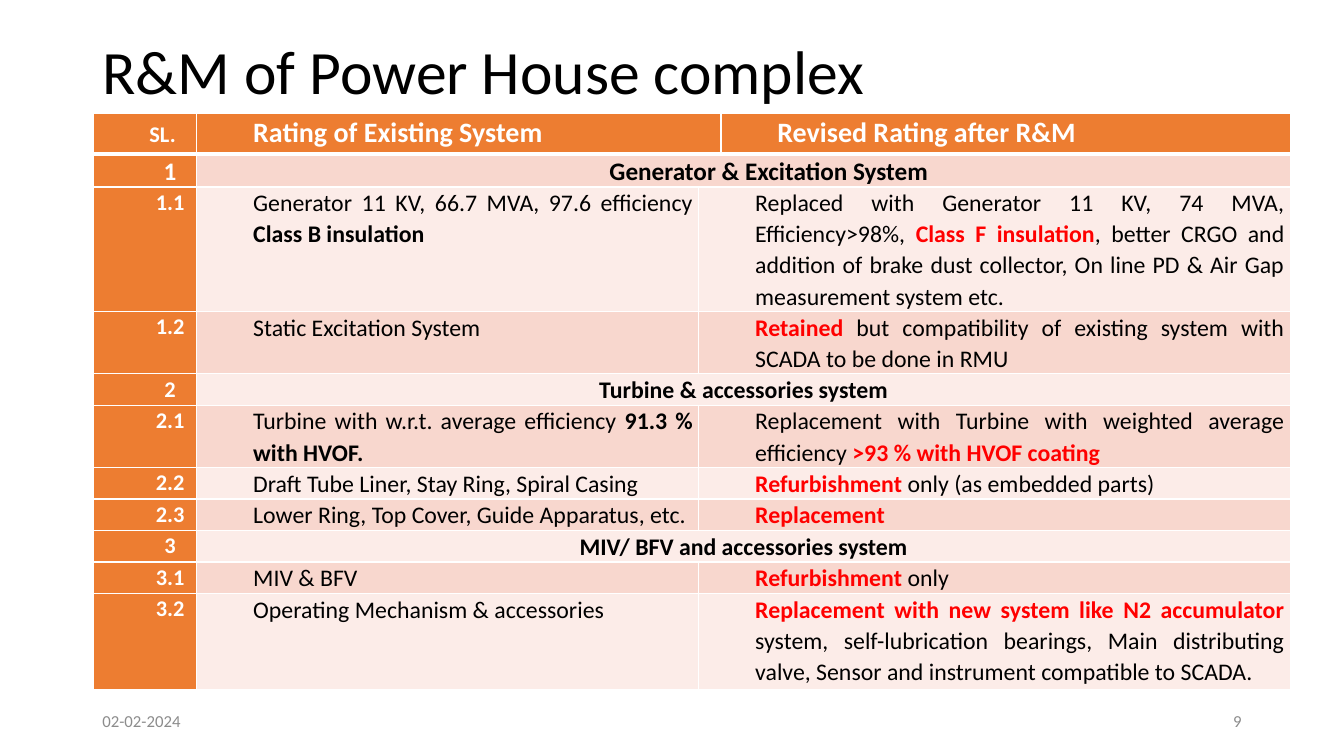
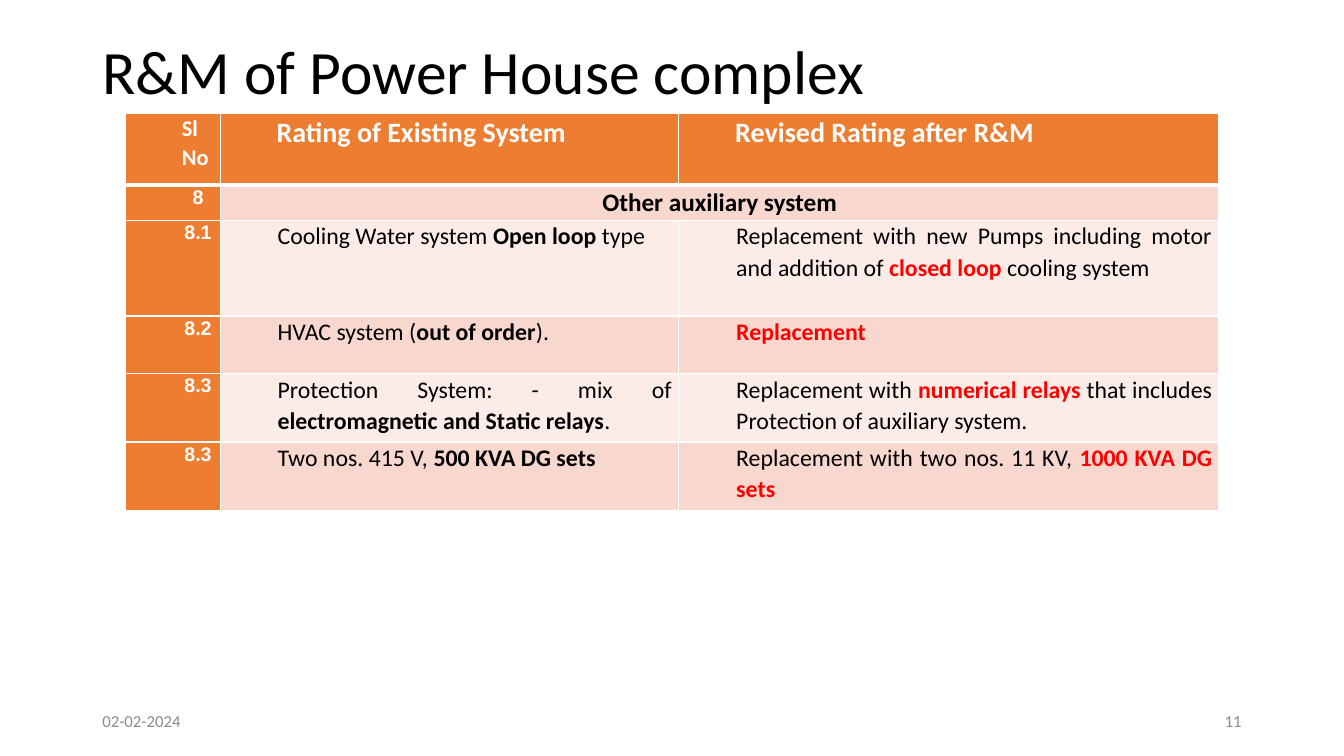
from lxml.etree import fromstring
from pptx import Presentation
from pptx.dml.color import RGBColor
from pptx.enum.text import MSO_ANCHOR as Anchor, MSO_AUTO_SIZE as Fit, PP_ALIGN as Align
from pptx.util import Pt

HUES = {"head": "ED7D31", "odd": "F8D7CE", "even": "FCECE8", "white": "FFFFFF",
        "black": "000000", "red": "FF0000", "grey": "8C8C8C"}
TITLE = "R&M of Power House complex"
DATE = "02-02-2024"
HEADS = ["Rating of Existing System", "Revised Rating after R&M"]
INDENT = 36
RULE = ('<a:lnB xmlns:a="http://schemas.openxmlformats.org/drawingml/2006/main" w="38100">'
        f'<a:solidFill><a:srgbClr val="{HUES["white"]}"/></a:solidFill></a:lnB>')

# Rows with two entries are section bands; *stars* mark the key words.
PAGES = [
    {"page": "9", "left": 66.4, "label": "SL.", "anchor": Anchor.MIDDLE, "pad": 4.3,
     "cols": [74.2, 358.6, 15.8, 406.8],
     "rows": [29, 23.5, 89, 44.5, 22.5, 44.5, 22.5, 22.5, 22.5, 22.5, 69],
     "font": "Calibri", "size": 16, "first": 18, "shift": INDENT,
     "body": [
         ("1", "Generator & Excitation System"),
         ("1.1", "Generator 11 KV, 66.7 MVA, 97.6 efficiency *Class B insulation*",
          "Replaced with Generator 11 KV, 74 MVA, Efficiency>98%, *Class F insulation*, "
          "better CRGO and addition of brake dust collector, On line PD & Air Gap "
          "measurement system etc."),
         ("1.2", "Static Excitation System",
          "*Retained* but compatibility of existing system with SCADA to be done in RMU"),
         ("2", "Turbine & accessories system"),
         ("2.1", "Turbine with w.r.t. average efficiency *91.3 % with HVOF.*",
          "Replacement with Turbine with weighted average efficiency "
          "*>93 % with HVOF coating*"),
         ("2.2", "Draft Tube Liner, Stay Ring, Spiral Casing",
          "*Refurbishment* only (as embedded parts)"),
         ("2.3", "Lower Ring, Top Cover, Guide Apparatus, etc.", "*Replacement*"),
         ("3", "MIV/ BFV and accessories system"),
         ("3.1", "MIV & BFV", "*Refurbishment* only"),
         ("3.2", "Operating Mechanism & accessories",
          "*Replacement with new system like N2 accumulator *system, self-lubrication "
          "bearings, Main distributing valve, Sensor and instrument compatible to SCADA."),
     ]},
    {"page": "11", "left": 89.6, "label": "Sl No", "anchor": Anchor.TOP, "pad": 5,
     "cols": [67.7, 327.6, 385.9],
     "rows": [51.1, 25.2, 68.4, 41, 49, 49],
     "font": "Arial", "size": 14, "first": 14, "shift": 0,
     "body": [
         ("8", "Other auxiliary system"),
         ("8.1", "Cooling Water system *Open loop *type",
          "Replacement with new Pumps including motor and addition of "
          "*closed loop *cooling system"),
         ("8.2", "HVAC system (*out of order*).", "*Replacement*"),
         ("8.3", "Protection System: - mix of *electromagnetic and Static relays*.",
          "Replacement with *numerical relays *that includes Protection of "
          "auxiliary system."),
         ("8.3", "Two nos. 415 V, *500 KVA DG sets*",
          "Replacement with two nos. 11 KV, *1000 KVA DG sets*"),
     ]},
]


def style(para, size, hue, align, bold=False, name="Calibri"):
    para.alignment = align
    font = para.font
    font.name, font.size, font.bold = name, Pt(size), bold
    font.color.rgb = RGBColor.from_string(HUES[hue])


def write(cell, text, size, hue, align, indent=INDENT, bold=False, name="Calibri", key=None):
    """Fill a cell's text; starred parts turn bold, in the key hue if given."""
    para = cell.text_frame.paragraphs[0]
    style(para, size, hue, align, bold, name)
    para.line_spacing = 1.07
    para._p.get_or_add_pPr().set("marL", str(Pt(indent)))
    for i, part in enumerate(text.split("*")):
        if part:
            run = para.add_run()
            run.text = part
            if i % 2:
                run.font.bold = True
                if key:
                    run.font.color.rgb = RGBColor.from_string(HUES[key])


deck = Presentation()
deck.slide_width, deck.slide_height = Pt(960), Pt(540)

for page in PAGES:
    slide = deck.slides.add_slide(deck.slide_layouts[5])
    title = slide.shapes.title
    title.left, title.top, title.width, title.height = Pt(66), Pt(26), Pt(828), Pt(55)
    frame = title.text_frame
    frame.text = TITLE
    frame.auto_size = Fit.NONE
    frame.vertical_anchor = Anchor.MIDDLE
    style(frame.paragraphs[0], 44, "black", Align.LEFT)
    frame.paragraphs[0].line_spacing = 0.9

    cols, rows = page["cols"], page["rows"]
    last = len(cols) - 1
    table = slide.shapes.add_table(len(rows), len(cols), Pt(page["left"]), Pt(81),
                                   Pt(sum(cols)), Pt(sum(rows))).table
    table.first_col = True
    for c, width in enumerate(cols):
        table.columns[c].width = Pt(width)
    for r, height in enumerate(rows):
        table.rows[r].height = Pt(height)
        band = "odd" if r % 2 else "even"
        for c in range(len(cols)):
            cell = table.cell(r, c)
            cell.margin_top = cell.margin_bottom = 0
            cell.margin_left = cell.margin_right = Pt(page["pad"] if r else 4.3)
            cell.fill.solid()
            hue = HUES["head" if r == 0 or c == 0 else band]
            cell.fill.fore_color.rgb = RGBColor.from_string(hue)
            if r == 0:
                cell._tc.get_or_add_tcPr().insert(0, fromstring(RULE))

    label = table.cell(0, 0)
    label.vertical_anchor = page["anchor"]
    write(label, page["label"], 16, "white", Align.LEFT, bold=True)
    if last == 3:
        table.cell(0, 1).merge(table.cell(0, 2))
    for c, head in zip((1, last), HEADS):
        write(table.cell(0, c), head, 20, "white", Align.JUSTIFY, bold=True)

    for r, (num, *texts) in enumerate(page["body"], 1):
        write(table.cell(r, 0), num, page["first"] if r == 1 else page["size"], "white",
              Align.CENTER, bold=True, name=page["font"])
        left = table.cell(r, 1)
        if len(texts) == 1:
            left.merge(table.cell(r, last))
            write(left, texts[0], 18 if r == 1 else 17, "black", Align.CENTER,
                  indent=page["shift"] if r == 1 else 0, bold=True)
            continue
        right = table.cell(r, 2)
        if last == 3:
            right.merge(table.cell(r, 3))
        write(left, texts[0], 17, "black", Align.JUSTIFY)
        write(right, texts[1], 17, "black", Align.JUSTIFY, key="red")

    for x, text, align in ((66, DATE, Align.LEFT), (678, page["page"], Align.RIGHT)):
        frame = slide.shapes.add_textbox(Pt(x), Pt(500.5), Pt(216), Pt(28.8)).text_frame
        frame.word_wrap = True
        frame.vertical_anchor = Anchor.MIDDLE
        frame.text = text
        style(frame.paragraphs[0], 12, "grey", align)

deck.save("out.pptx")
